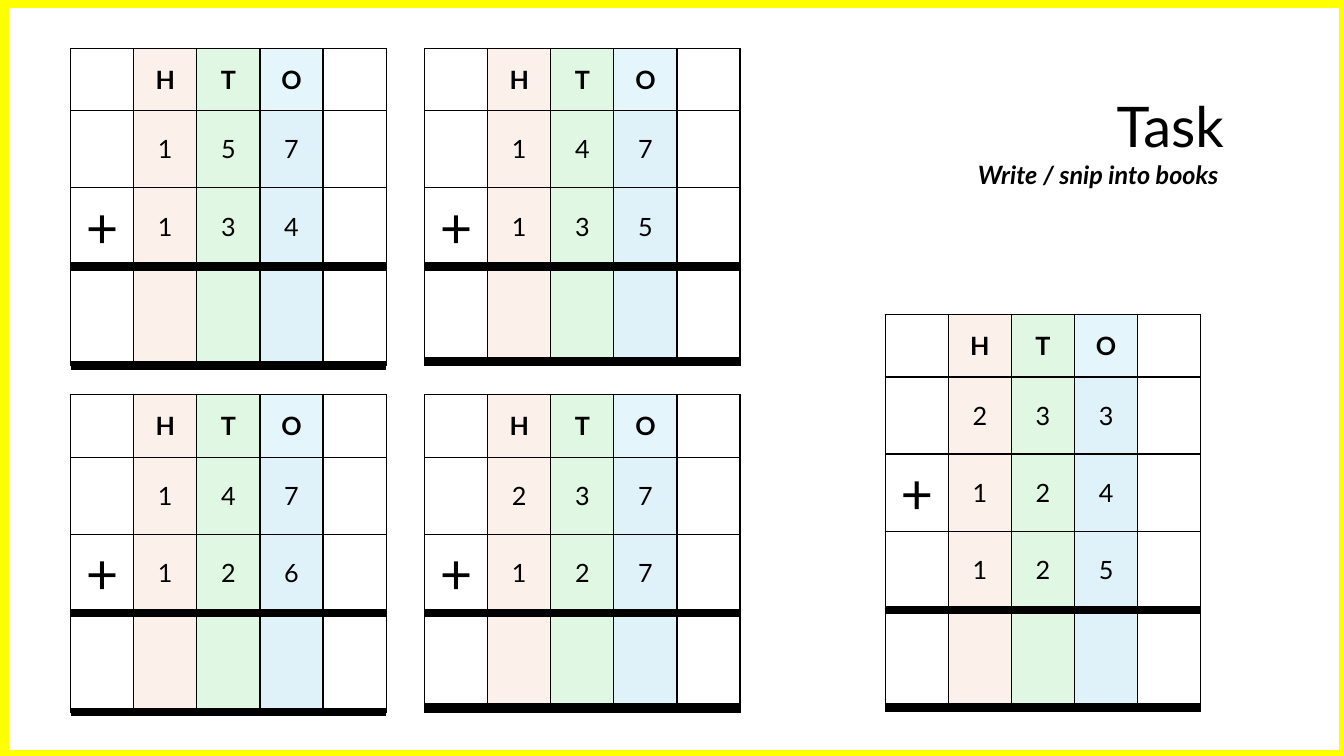
import pptx
import pptx.dml.color
import pptx.enum.shapes
import pptx.enum.text
import pptx.oxml
import pptx.oxml.ns
import pptx.util

Cm = pptx.util.Cm
Pt = pptx.util.Pt
ALIGN = pptx.enum.text.PP_ALIGN
COLORS = {
    "ink": "000000",
    "frame": "FFFF00",
    "hundreds": "FBE3D6",
    "tens": "C2F1C8",
    "ones_head": "CAEEFB",
    "ones": "C1E5F5",
}
COLUMN_WIDTH = 1.59
HEAD_HEIGHT = 1.57
DIGIT_HEIGHT = 1.94
ANSWER_HEIGHT = 2.54
RULE_OFFSET = 0.05


class Worksheet:
    font = "Lato"

    def __init__(self, slide):
        self.slide = slide

    def color(self, name):
        return pptx.dml.color.RGBColor.from_string(COLORS[name])

    def run(self, p, text, size, bold=False, italic=False):
        r = p.add_run()
        r.text = text
        r.font.name = self.font
        r.font.size = Pt(size)
        r.font.bold = bold
        r.font.italic = italic
        r.font.color.rgb = self.color("ink")

    def text(self, left, top, width, height, text, size, **style):
        sp = self.slide.shapes.add_textbox(Cm(left), Cm(top), Cm(width), Cm(height))
        tf = sp.text_frame
        tf.word_wrap = False
        tf.auto_size = pptx.enum.text.MSO_AUTO_SIZE.SHAPE_TO_FIT_TEXT
        p = tf.paragraphs[0]
        p.alignment = ALIGN.RIGHT
        self.run(p, text, size, **style)

    def frame(self, left, top, width, height):
        sp = self.slide.shapes.add_shape(
            pptx.enum.shapes.MSO_SHAPE.RECTANGLE, Cm(left), Cm(top), width, height)
        sp.shadow.inherit = False
        sp.fill.background()
        sp.line.color.rgb = self.color("frame")
        sp.line.width = Pt(10)

    def rule(self, left, top, width):
        line = self.slide.shapes.add_connector(
            pptx.enum.shapes.MSO_CONNECTOR.STRAIGHT,
            Cm(left), Cm(top), Cm(left + width), Cm(top))
        line.line.color.rgb = self.color("ink")
        line.line.width = Pt(6)
        sp_pr = line._element.spPr
        sp_pr.append(pptx.oxml.parse_xml(
            f'<a:effectLst {pptx.oxml.ns.nsdecls("a")}/>'))

    def cell(self, cell, text, fill, bold):
        tc_pr = cell._tc.get_or_add_tcPr()
        for side in ("lnL", "lnR", "lnT", "lnB"):
            tc_pr.append(pptx.oxml.parse_xml(
                f'<a:{side} {pptx.oxml.ns.nsdecls("a")} w="12700"><a:solidFill>'
                f'<a:srgbClr val="{COLORS["ink"]}"/></a:solidFill></a:{side}>'))
        if fill:
            cell.fill.solid()
            cell.fill.fore_color.rgb = self.color(fill)
            srgb = tc_pr.find(pptx.oxml.ns.qn("a:solidFill"))[0]
            srgb.append(pptx.oxml.parse_xml(
                f'<a:alpha {pptx.oxml.ns.nsdecls("a")} val="50000"/>'))
        else:
            cell.fill.background()
        cell.vertical_anchor = pptx.enum.text.MSO_ANCHOR.MIDDLE
        p = cell.text_frame.paragraphs[0]
        p.alignment = ALIGN.CENTER
        if text.strip():
            self.run(p, text, 40 if text == "+" else 18, bold=bold)

    def addition(self, left, top, addends, answer_depth):
        rows = [" HTO "]
        for i, addend in enumerate(addends):
            rows.append(("+" if i == 1 else " ") + addend + " ")
        rows.append(" " * 5)
        heights = [HEAD_HEIGHT] + [DIGIT_HEIGHT] * len(addends) + [ANSWER_HEIGHT]
        width = COLUMN_WIDTH * 5
        table = self.slide.shapes.add_table(
            len(rows), 5, Cm(left), Cm(top), Cm(width), Cm(sum(heights))).table
        table.first_row = False
        table.horz_banding = False
        for column in table.columns:
            column.width = Cm(COLUMN_WIDTH)
        for i, (row, height) in enumerate(zip(rows, heights)):
            table.rows[i].height = Cm(height)
            ones = "ones" if i else "ones_head"
            fills = (None, "hundreds", "tens", ones, None)
            for j, (text, fill) in enumerate(zip(row, fills)):
                self.cell(table.cell(i, j), text, fill, bold=i == 0)
        sum_line = top + sum(heights[:-1]) + RULE_OFFSET
        self.rule(left, sum_line, width)
        self.rule(left, sum_line + answer_depth, width)


def main():
    prs = pptx.Presentation()
    prs.slide_width = Cm(33.87)
    prs.slide_height = Cm(19.05)
    s = prs.slides.add_slide(prs.slide_layouts[6])
    sheet = Worksheet(s)
    sheet.text(27.86, 2.18, 3.23, 1.96, "Task", 40)
    sheet.text(23.95, 3.89, 7.01, 1.02, "Write / snip into books", 18,
               bold=True, italic=True)
    sheet.frame(0.05, 0.03, prs.slide_width, prs.slide_height)
    for left, top, addends, answer_depth in (
        (1.78, 1.22, ("157", "134"), 2.49),
        (10.7, 1.22, ("147", "135"), 2.37),
        (22.31, 7.93, ("233", "124", "125"), 2.46),
        (1.78, 9.95, ("147", "126"), 2.49),
        (10.7, 9.95, ("237", "127"), 2.38),
    ):
        sheet.addition(left, top, addends, answer_depth)
    prs.save("out.pptx")


if __name__ == "__main__":
    main()
